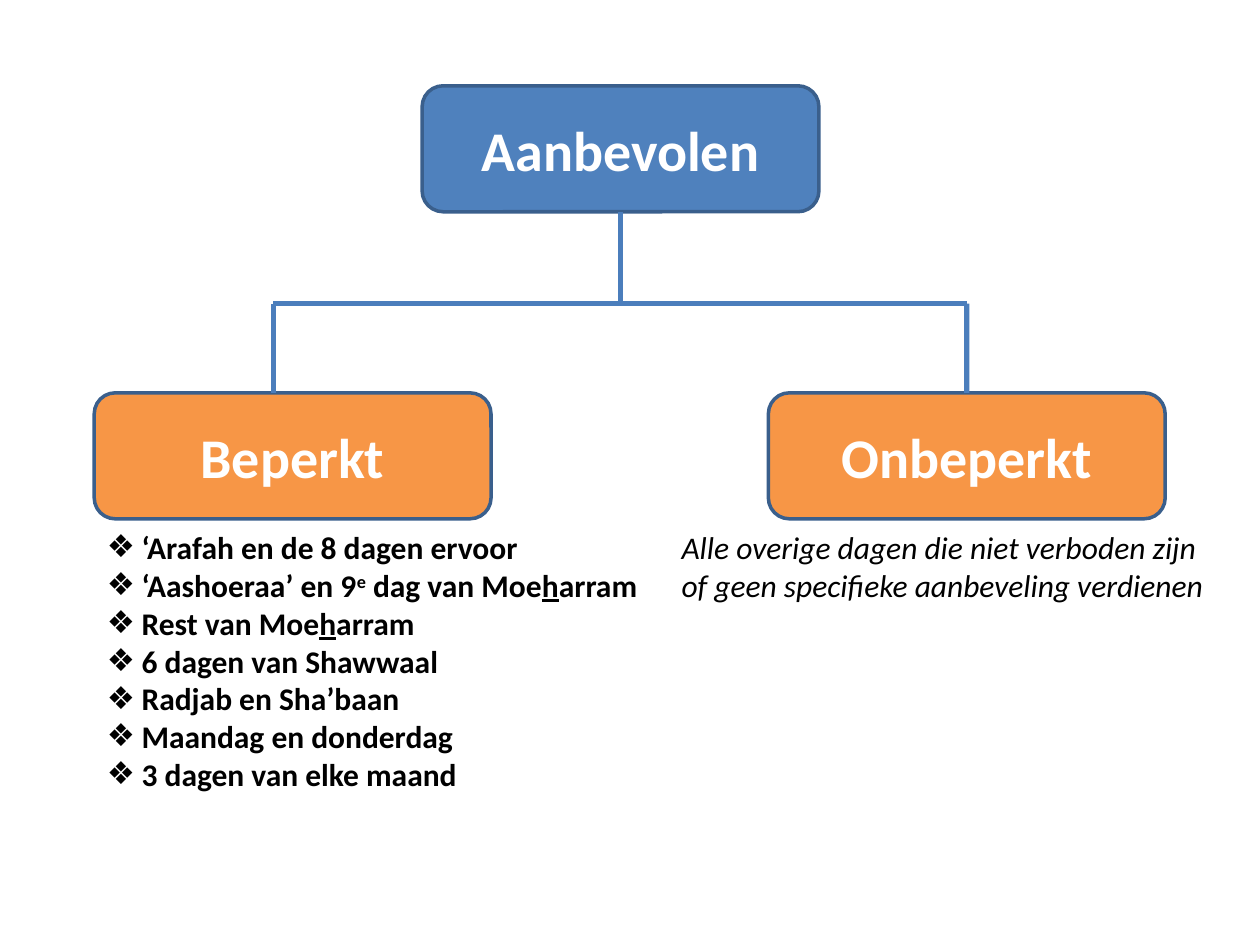
import pptx
import pptx.util
import pptx.dml.color
import pptx.enum.shapes
import pptx.enum.text
import pptx.oxml.ns
import lxml.etree

Cm, Pt = pptx.util.Cm, pptx.util.Pt
RGB = pptx.dml.color.RGBColor
BLUE = RGB(0x4F, 0x81, 0xBD)
ORANGE = RGB(0xF7, 0x96, 0x46)
EDGE = RGB(0x3A, 0x5F, 0x8C)
WIRE = RGB(0x4B, 0x7E, 0xBC)
WHITE = RGB(0xFF, 0xFF, 0xFF)
BLACK = RGB(0, 0, 0)
FONT = "Calibri"
WIDE, HIGH = 8, 2.54
ITEMS = [
    ["‘Arafah en de 8 dagen ervoor"],
    ["‘Aashoeraa’ en 9", "e", " dag van Moe", "h", "arram"],
    ["Rest van Moe", "h", "arram"],
    ["6 dagen van Shawwaal"],
    ["Radjab en Sha’baan"],
    ["Maandag en donderdag"],
    ["3 dagen van elke maand"],
]
NOTE = "Alle overige dagen die niet verboden zijn of geen specifieke aanbeveling verdienen"


def style(run, size, color, bold=False, italic=False):
    """Set the font of one run."""
    font = run.font
    font.name, font.size = FONT, Pt(size)
    font.bold, font.italic = bold, italic
    font.color.rgb = color


def place(shape, left, top, width, height):
    """Move a shape to a box given in centimetres."""
    shape.left, shape.top = Cm(left), Cm(top)
    shape.width, shape.height = Cm(width), Cm(height)


def label(shape, text):
    """Write a centred white heading in a shape."""
    frame = shape.text_frame
    frame.text = text
    frame.word_wrap = True
    frame.vertical_anchor = pptx.enum.text.MSO_ANCHOR.MIDDLE
    line = frame.paragraphs[0]
    line.alignment = pptx.enum.text.PP_ALIGN.CENTER
    style(line.runs[0], 32, WHITE, bold=True)


def add_node(slide, left, top, color):
    """Draw one rounded box of the tree."""
    node = slide.shapes.add_shape(
        pptx.enum.shapes.MSO_SHAPE.ROUNDED_RECTANGLE,
        Cm(left), Cm(top), Cm(WIDE), Cm(HIGH))
    node.shadow.inherit = False
    node.fill.solid()
    node.fill.fore_color.rgb = color
    node.line.color.rgb = EDGE
    node.line.width = Pt(2)
    return node


def add_root(slide, left, top):
    """Draw the top box with the slide title on it."""
    node = add_node(slide, left, top, BLUE)
    title = slide.shapes.title
    place(title, left, top, WIDE, HIGH)
    label(title, "Aanbevolen")
    title.text_frame.auto_size = pptx.enum.text.MSO_AUTO_SIZE.NONE
    slide.shapes._spTree.append(title._element)
    return node


def add_wire(slide, start, end):
    """Draw one straight line of the tree."""
    wire = slide.shapes.add_connector(
        pptx.enum.shapes.MSO_CONNECTOR.STRAIGHT, *map(Cm, start + end))
    wire.line.color.rgb = WIRE
    wire.line.width = Pt(3)
    lxml.etree.SubElement(wire._element.spPr, pptx.oxml.ns.qn("a:effectLst"))
    return wire


def add_tree(slide, left, top):
    """Draw the boxes and the lines between them."""
    low, bar = top + 6.19, top + 4.39
    near, mid, far = left + 3.61, left + 10.61, left + 17.59
    root = add_root(slide, left + 6.61, top)
    first = add_node(slide, left, low, ORANGE)
    label(first, "Beperkt")
    last = add_node(slide, left + 13.59, low, ORANGE)
    label(last, "Onbeperkt")
    add_wire(slide, (far, bar), (near, bar))
    add_wire(slide, (near, low), (near, bar))
    add_wire(slide, (far, low), (far, bar)).begin_connect(last, 0)
    add_wire(slide, (mid, bar), (mid, top + HIGH)).end_connect(root, 2)


def add_mark(line):
    """Give a paragraph a diamond bullet with a hanging indent."""
    props = line._p.get_or_add_pPr()
    props.set("marL", str(Cm(0.7)))
    props.set("indent", str(-Cm(0.7)))
    mark = lxml.etree.SubElement(props, pptx.oxml.ns.qn("a:buChar"))
    mark.set("char", "❖")


def add_list(slide, left, top, width, height):
    """Fill the body placeholder with the limited days."""
    body = slide.placeholders[1]
    place(body, left, top, width, height)
    frame = body.text_frame
    frame.auto_size = pptx.enum.text.MSO_AUTO_SIZE.NONE
    frame.margin_right = 0
    for index, parts in enumerate(ITEMS):
        line = frame.add_paragraph() if index else frame.paragraphs[0]
        line.space_before = Pt(0)
        add_mark(line)
        for part in parts:
            run = line.add_run()
            run.text = part
            style(run, 18, BLACK, bold=True)
            if part == "h":
                run.font.underline = True
            elif part == "e":
                run._r.get_or_add_rPr().set("baseline", "30000")


def add_note(slide, left, top, width, height):
    """Write the remark on the unlimited days."""
    box = slide.shapes.add_textbox(*map(Cm, (left, top, width, height)))
    frame = box.text_frame
    frame.word_wrap = True
    frame.text = NOTE
    style(frame.paragraphs[0].runs[0], 18, BLACK, italic=True)


def main():
    """Build the slide and save it."""
    deck = pptx.Presentation()
    deck.slide_width, deck.slide_height = Cm(25.4), Cm(19.05)
    slide = deck.slides.add_slide(deck.slide_layouts[1])
    add_tree(slide, 1.9, 1.73)
    add_list(slide, 1.9, 10.52, 11.2, 6.4)
    add_note(slide, 13.49, 10.52, 11.2, 1.8)
    deck.save("out.pptx")


if __name__ == "__main__":
    main()
